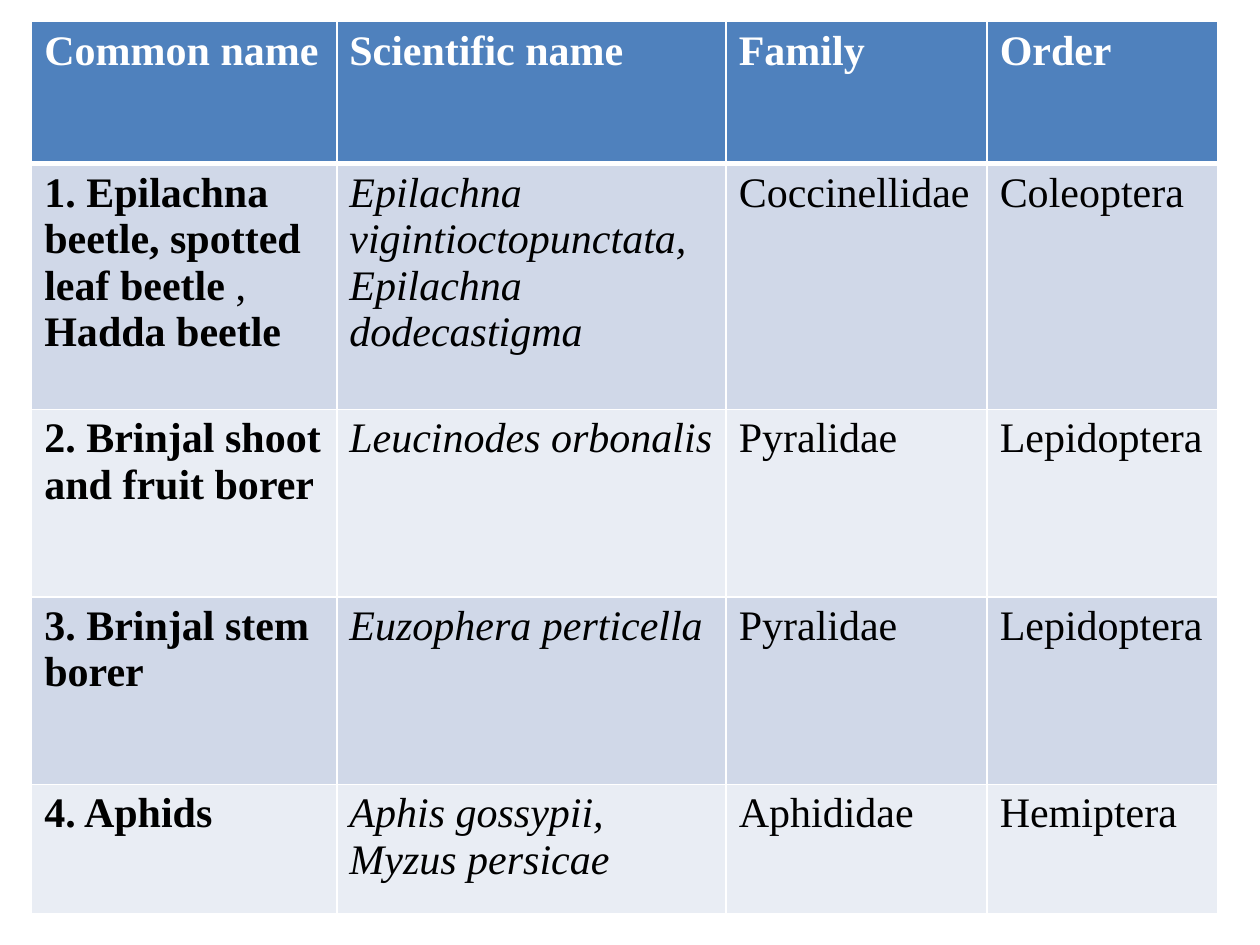
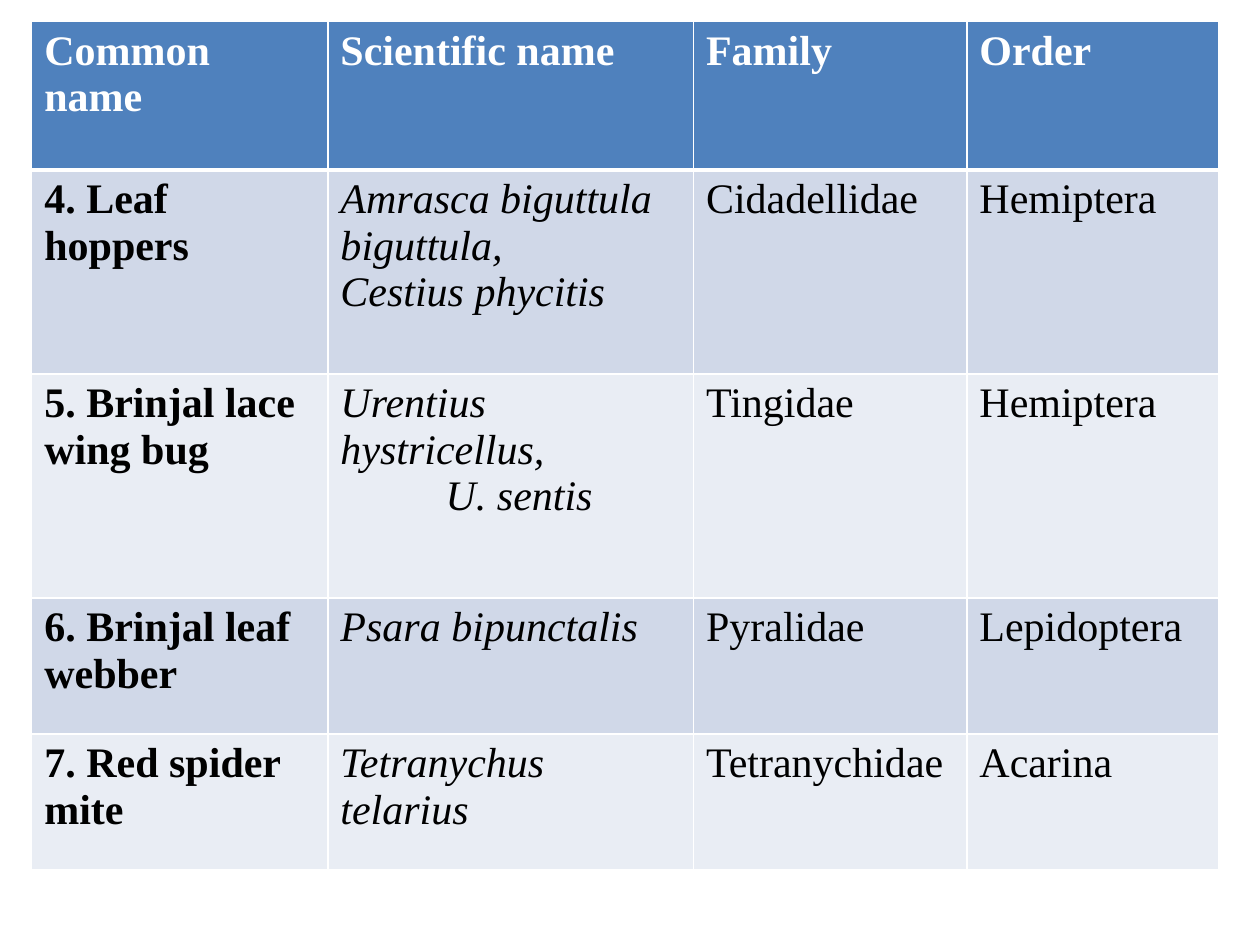
from pptx import Presentation
from pptx.dml.color import RGBColor
from pptx.oxml import parse_xml
from pptx.oxml.ns import nsdecls
from pptx.util import Cm, Pt

WHITE = RGBColor(0xFF, 0xFF, 0xFF)
BLACK = RGBColor(0x00, 0x00, 0x00)
HEADER_BLUE = RGBColor(0x4F, 0x81, 0xBD)
BANDS = [RGBColor(0xE9, 0xED, 0xF4), RGBColor(0xD0, 0xD8, 0xE8)]

FONT = "Times New Roman"
LEFT, TOP = Cm(0.64), Cm(0.43)
HEADINGS = ["Common name", "Scientific name", "Family", "Order"]

# A line break starts a paragraph, a tab indents it, and "|" switches bold off and on.
PEST_TABLES = [
    {
        "widths": [6.15, 7.85, 5.26, 4.65],
        "heights": [2.87, 4.95, 3.78, 3.78, 2.62],
        "pests": [
            ["1. Epilachna beetle, spotted leaf beetle| , |Hadda beetle",
             "Epilachna vigintioctopunctata, Epilachna dodecastigma",
             "Coccinellidae", "Coleoptera"],
            ["2. Brinjal shoot and fruit borer", "Leucinodes orbonalis",
             "Pyralidae", "Lepidoptera"],
            ["3. Brinjal stem borer", "Euzophera perticella",
             "Pyralidae", "Lepidoptera"],
            ["4. Aphids", "Aphis gossypii, Myzus persicae",
             "Aphididae", "Hemiptera"],
        ],
    },
    {
        "widths": [5.97, 7.37, 5.51, 5.08],
        "heights": [3, 4.11, 4.52, 2.74, 2.74],
        "pests": [
            ["4. Leaf hoppers", "Amrasca biguttula biguttula,\nCestius phycitis",
             "Cidadellidae", "Hemiptera"],
            ["5. Brinjal lace wing bug", "Urentius hystricellus,\n\tU. sentis",
             "Tingidae", "Hemiptera"],
            ["6. Brinjal leaf webber", "Psara bipunctalis",
             "Pyralidae", "Lepidoptera"],
            ["7. Red spider mite", "Tetranychus telarius",
             "Tetranychidae", "Acarina"],
        ],
    },
]


def write_text(cell, text, color=BLACK, bold=False, italic=False):
    frame = cell.text_frame
    for index, line in enumerate(text.split("\n")):
        para = frame.add_paragraph() if index else frame.paragraphs[0]
        if line.startswith("\t"):
            para._p.get_or_add_pPr().set("marL", str(Cm(2.12)))
        for part, words in enumerate(line.strip("\t").split("|")):
            span = para.add_run()
            span.text = words
            span.font.name = FONT
            span.font.size = Pt(24)
            span.font.color.rgb = color
            span.font.bold = bold and part % 2 == 0
            span.font.italic = italic


def set_borders(cell, **widths):
    """Draw white borders; widths are points by side, in the order L, R, T, B."""
    properties = cell._tc.get_or_add_tcPr()
    for position, (side, width) in enumerate(widths.items()):
        properties.insert(position, parse_xml(
            f'<a:ln{side} {nsdecls("a")} w="{Pt(width)}"><a:solidFill>'
            f'<a:srgbClr val="{WHITE}"/></a:solidFill></a:ln{side}>'))


deck = Presentation()
deck.slide_width, deck.slide_height = Cm(25.4), Cm(19.05)

for content in PEST_TABLES:
    page = deck.slides.add_slide(deck.slide_layouts[6])
    widths, heights = content["widths"], content["heights"]
    rows = [HEADINGS] + content["pests"]
    table = page.shapes.add_table(len(rows), len(HEADINGS), LEFT, TOP,
                                  Cm(sum(widths)), Cm(sum(heights))).table
    for column, width in zip(table.columns, widths):
        column.width = Cm(width)

    for r, (texts, height) in enumerate(zip(rows, heights)):
        table.rows[r].height = Cm(height)
        is_header = r == 0
        for c, text in enumerate(texts):
            cell = table.cell(r, c)
            cell.fill.solid()
            cell.fill.fore_color.rgb = HEADER_BLUE if is_header else BANDS[r % 2]
            set_borders(cell, L=1, R=1, T=3 if r == 1 else 1, B=3 if is_header else 1)
            write_text(cell, text, color=WHITE if is_header else BLACK,
                       bold=is_header or c == 0, italic=not is_header and c == 1)

deck.save("out.pptx")
